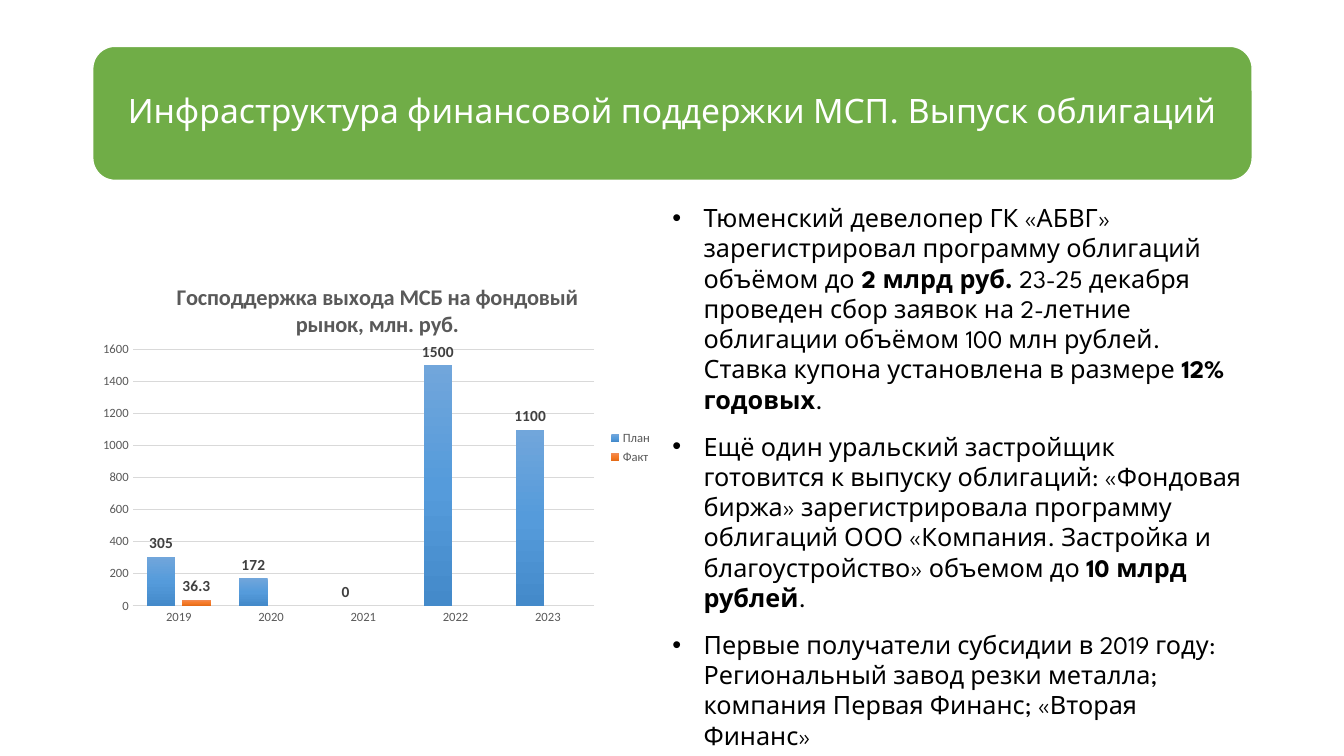
from dataclasses import dataclass

from lxml.etree import SubElement
from pptx import Presentation
from pptx.chart.chart import Chart
from pptx.chart.data import CategoryChartData
from pptx.dml.color import RGBColor
from pptx.enum.chart import XL_CHART_TYPE as ChartType
from pptx.enum.chart import XL_LABEL_POSITION as LabelPosition
from pptx.enum.chart import XL_LEGEND_POSITION as LegendPosition
from pptx.enum.chart import XL_TICK_MARK as TickMark
from pptx.enum.shapes import MSO_SHAPE as Preset
from pptx.enum.text import MSO_ANCHOR as Anchor
from pptx.enum.text import PP_ALIGN as Align
from pptx.oxml import parse_xml
from pptx.oxml.ns import qn
from pptx.slide import Slide
from pptx.util import Inches, Pt

WHITE = RGBColor(0xFF, 0xFF, 0xFF)
BLACK = RGBColor(0x00, 0x00, 0x00)
GREEN = RGBColor(0x70, 0xAD, 0x47)
GRAY = RGBColor(0x59, 0x59, 0x59)
DARK_GRAY = RGBColor(0x40, 0x40, 0x40)
LIGHT_GRAY = RGBColor(0xD9, 0xD9, 0xD9)
BLUES = (RGBColor(0x71, 0xA6, 0xDB), RGBColor(0x55, 0x9B, 0xDB), RGBColor(0x44, 0x8A, 0xCA))
ORANGES = (RGBColor(0xF1, 0x8C, 0x57), RGBColor(0xF6, 0x7B, 0x28), RGBColor(0xE5, 0x6C, 0x19))
TEXT_FONT = "League Spartan"
CHART_FONT = "Calibri"
CHART_NS = "http://schemas.openxmlformats.org/drawingml/2006/chart"


@dataclass
class Box:
    left: float
    top: float
    width: float
    height: float

    def lengths(self) -> list[Inches]:
        return [Inches(n) for n in (self.left, self.top, self.width, self.height)]


@dataclass
class Span:
    text: str
    bold: bool = False


@dataclass
class Measure:
    name: str
    values: list[float | None]
    gradient: tuple[RGBColor, ...]


YEARS = ["2019", "2020", "2021", "2022", "2023"]
MEASURES = [
    Measure("План", [305, 172, 0, 1500, 1100], BLUES),
    Measure("Факт", [36.3, None, None, None, None], ORANGES),
]
BULLETS = [
    [
        Span("Тюменский девелопер ГК «АБВГ» зарегистрировал программу облигаций объёмом до"),
        Span(" 2 млрд руб. ", True),
        Span("23-25 декабря проведен сбор заявок на 2-летние облигации объёмом "
             "100 млн рублей. Ставка купона установлена в размере "),
        Span("12% годовых", True),
        Span("."),
    ],
    [
        Span("Ещё один уральский застройщик готовится к выпуску облигаций: "
             "«Фондовая биржа» зарегистрировала программу облигаций ООО «Компания. "
             "Застройка и благоустройство» объемом до "),
        Span("10 млрд рублей", True),
        Span("."),
    ],
    [
        Span("Первые получатели субсидии в 2019 году: Региональный завод резки металла; "
             "компания Первая Финанс; «Вторая Финанс»"),
    ],
]


def set_font(font, size: float, color: RGBColor, name: str, bold: bool = False) -> None:
    for key, value in {"size": Pt(size), "name": name, "bold": bold}.items():
        setattr(font, key, value)
    font.color.rgb = color


def add_heading(page: Slide) -> None:
    banner = page.shapes.add_shape(
        Preset.ROUNDED_RECTANGLE, *Box(0.92, 0.46, 11.5, 1.33).lengths())
    banner.shadow.inherit = False
    banner.fill.solid()
    banner.fill.fore_color.rgb = GREEN
    banner.line.color.rgb = WHITE
    banner.line.width = Pt(1)
    title = page.shapes.title
    title._element.addprevious(banner._element)
    title.left, title.top, title.width, title.height = Box(0.98, 0.52, 11.37, 1.2).lengths()
    frame = title.text_frame
    frame.text = "Инфраструктура финансовой поддержки МСП. Выпуск облигаций"
    frame.vertical_anchor = Anchor.MIDDLE
    for side in ("left", "top", "right", "bottom"):
        setattr(frame, f"margin_{side}", Inches(0.1))
    para = frame.paragraphs[0]
    para.alignment = Align.CENTER
    para.line_spacing = 0.9
    set_font(para.runs[0].font, 24, WHITE, TEXT_FONT)


def add_bullets(page: Slide) -> None:
    frame = page.shapes.add_textbox(*Box(6.57, 1.96, 5.85, 5.28).lengths()).text_frame
    frame.word_wrap = True
    for index, spans in enumerate(BULLETS):
        para = frame.add_paragraph() if index else frame.paragraphs[0]
        para.space_after = Pt(12)
        props = para._p.get_or_add_pPr()
        props.set("marL", str(Inches(0.31)))
        props.set("indent", str(Inches(-0.31)))
        SubElement(props, qn("a:buFont"), typeface="Arial")
        SubElement(props, qn("a:buChar"), char="•")
        for span in spans:
            run = para.add_run()
            run.text = span.text
            set_font(run.font, 18, BLACK, TEXT_FONT, span.bold)


def place(parent, **settings: str | float) -> None:
    fields = "".join(f'<c:{key} val="{value}"/>' for key, value in settings.items())
    layout = parse_xml(
        f'<c:layout xmlns:c="{CHART_NS}"><c:manualLayout>{fields}</c:manualLayout></c:layout>')
    for old in parent.findall(qn("c:layout")):
        parent.remove(old)
    text = parent.find(qn("c:tx"))
    if text is None:
        parent.insert(0, layout)
    else:
        text.addnext(layout)


def format_axes(chart: Chart) -> None:
    for axis in (chart.category_axis, chart.value_axis):
        axis.major_tick_mark = axis.minor_tick_mark = TickMark.NONE
        set_font(axis.tick_labels.font, 9, GRAY, CHART_FONT)
    chart.category_axis.format.line.color.rgb = LIGHT_GRAY
    chart.category_axis.format.line.width = Pt(1)
    values = chart.value_axis
    values.format.line.fill.background()
    for key, value in {"minimum_scale": 0, "maximum_scale": 1600, "major_unit": 200}.items():
        setattr(values, key, value)
    values.major_gridlines.format.line.color.rgb = LIGHT_GRAY
    values.major_gridlines.format.line.width = Pt(0.75)


def format_series(series, measure: Measure) -> None:
    fill = series.format.fill
    fill.gradient()
    fill.gradient_angle = 270
    stops = series._element.find(".//" + qn("a:gsLst"))
    stops.clear()
    for index, color in enumerate(measure.gradient):
        stop = SubElement(stops, qn("a:gs"), pos=str(index * 50000))
        SubElement(stop, qn("a:srgbClr"), val=str(color))
    labels = series.data_labels
    for key, value in {"show_value": True, "position": LabelPosition.OUTSIDE_END}.items():
        setattr(labels, key, value)
    set_font(labels.font, 11, DARK_GRAY, CHART_FONT, True)


def add_bond_chart(page: Slide) -> None:
    data = CategoryChartData()
    data.categories = YEARS
    for measure in MEASURES:
        data.add_series(measure.name, measure.values)
    chart = page.shapes.add_chart(
        ChartType.COLUMN_CLUSTERED, *Box(0.92, 2.57, 5.65, 3.74).lengths(), data).chart
    set_font(chart.font, 10, BLACK, CHART_FONT)
    frame = chart.chart_title.text_frame
    frame.text = "Господдержка выхода МСБ на фондовый рынок, млн. руб."
    set_font(frame.paragraphs[0].runs[0].font, 16, GRAY, CHART_FONT, True)
    chart.chart_title.include_in_layout = False
    place(chart.chart_title._element, xMode="edge", yMode="edge", x=0.14, y=0.05)
    chart.has_legend = True
    chart.legend.position = LegendPosition.RIGHT
    chart.legend.include_in_layout = False
    set_font(chart.legend.font, 9, GRAY, CHART_FONT)
    plot = chart.plots[0]
    for key, value in {"gap_width": 100, "overlap": -24, "vary_by_categories": False}.items():
        setattr(plot, key, value)
    place(plot._element.getparent(), layoutTarget="inner", xMode="edge", yMode="edge",
          x=0.07, y=0.24, w=0.81, h=0.68)
    format_axes(chart)
    for series, measure in zip(plot.series, MEASURES):
        format_series(series, measure)


def main() -> None:
    deck = Presentation()
    deck.slide_width, deck.slide_height = Inches(13.33), Inches(7.5)
    page = deck.slides.add_slide(deck.slide_layouts[5])
    add_heading(page)
    add_bond_chart(page)
    add_bullets(page)
    deck.save("out.pptx")


if __name__ == "__main__":
    main()
